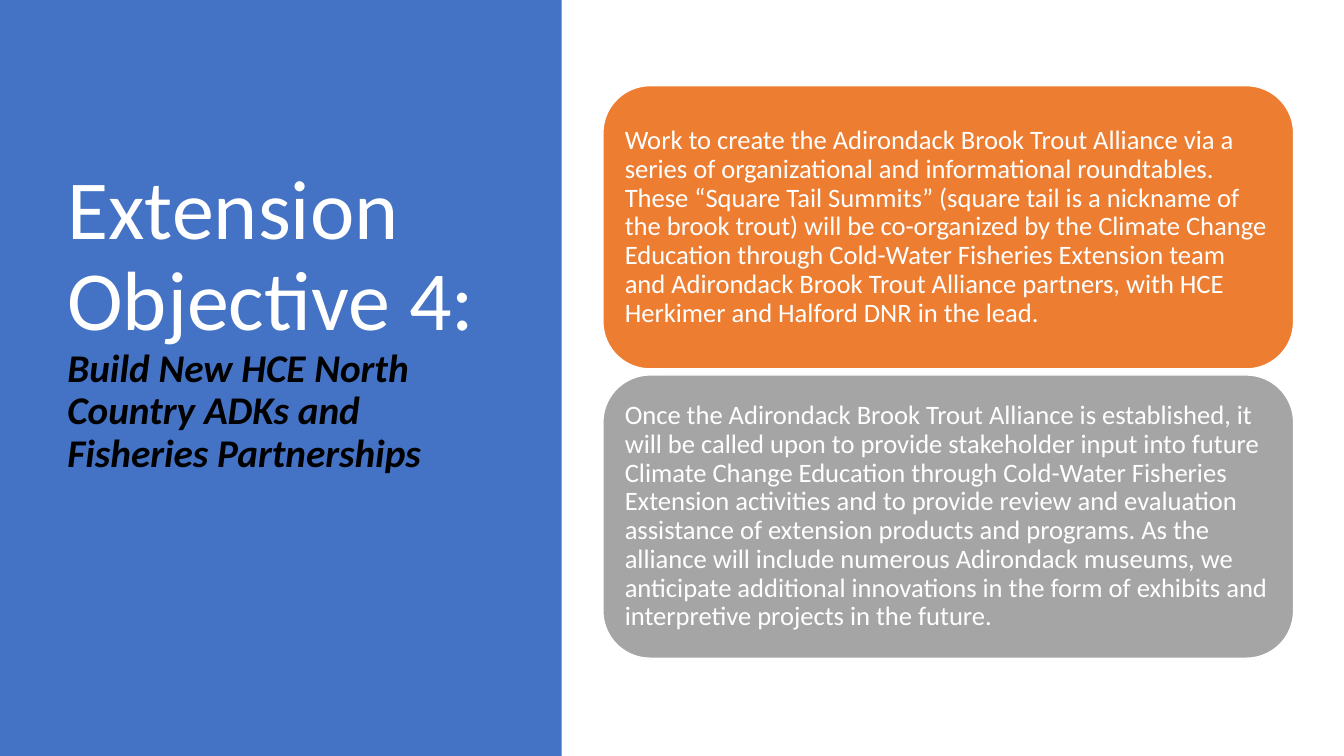
from dataclasses import dataclass

from pptx import Presentation
from pptx.dml.color import RGBColor
from pptx.enum.shapes import MSO_SHAPE as Shape
from pptx.enum.text import MSO_ANCHOR as Anchor, PP_ALIGN as Align
from pptx.util import Emu, Pt

PX = 9144  # EMU per px, 100 px to the inch
SLIDE_W, SLIDE_H = 1333, 750
PANEL_W = 557
CARD_X, CARD_Y, CARD_W, CARD_H = 598, 85, 685, 281
CARD_PITCH = 287
FONT = "Calibri"

BLUE = RGBColor(0x44, 0x72, 0xC4)
ORANGE = RGBColor(0xED, 0x7D, 0x31)
GRAY = RGBColor(0xA5, 0xA5, 0xA5)
WHITE = RGBColor(0xFF, 0xFF, 0xFF)
BLACK = RGBColor(0x00, 0x00, 0x00)


@dataclass
class TextRun:
    text: str
    size: int
    color: RGBColor = WHITE
    emphasis: bool = False


@dataclass
class Card:
    fill: RGBColor
    text: str


TITLE = [
    TextRun("Extension Objective 4: ", 60),
    TextRun("Build New HCE North Country ADKs and Fisheries Partnerships", 28, BLACK, True),
]

CARDS = [
    Card(ORANGE, "Work to create the Adirondack Brook Trout Alliance via a series of "
                 "organizational and informational roundtables. These “Square Tail Summits” "
                 "(square tail is a nickname of the brook trout) will be co-organized by the "
                 "Climate Change Education through Cold-Water Fisheries Extension team and "
                 "Adirondack Brook Trout Alliance partners, with HCE Herkimer and Halford DNR "
                 "in the lead."),
    Card(GRAY, "Once the Adirondack Brook Trout Alliance is established, it will be called upon "
               "to provide stakeholder input into future Climate Change Education through "
               "Cold-Water Fisheries Extension activities and to provide review and evaluation "
               "assistance of extension products and programs. As the alliance will include "
               "numerous Adirondack museums, we anticipate additional innovations in the form "
               "of exhibits and interpretive projects in the future."),
]


def px(*values: int) -> list[Emu]:
    return [Emu(v * PX) for v in values]


def add_block(slide, kind: Shape, box: tuple[int, int, int, int], fill: RGBColor):
    sp = slide.shapes.add_shape(kind, *px(*box))
    sp.shadow.inherit = False
    sp.fill.solid()
    sp.fill.fore_color.rgb = fill
    sp.line.fill.background()
    return sp


def write(tf, runs: list[TextRun], insets: tuple[int, int, int, int]) -> None:
    """Fill a frame with one left-aligned paragraph; insets run left, top, right, bottom."""
    tf.word_wrap = True
    tf.vertical_anchor = Anchor.MIDDLE
    tf.margin_left, tf.margin_top, tf.margin_right, tf.margin_bottom = px(*insets)
    p = tf.paragraphs[0]
    p.alignment = Align.LEFT
    p.line_spacing = 0.9
    for run in runs:
        r = p.add_run()
        r.text = run.text
        r.font.name = FONT
        r.font.size = Pt(run.size)
        r.font.color.rgb = run.color
        r.font.bold = r.font.italic = run.emphasis


def main() -> None:
    prs = Presentation()
    prs.slide_width, prs.slide_height = px(SLIDE_W, SLIDE_H)
    slide = prs.slides.add_slide(prs.slide_layouts[6])

    add_block(slide, Shape.RECTANGLE, (0, 0, PANEL_W, SLIDE_H), BLUE)
    title = slide.shapes.add_textbox(*px(57, 68, 436, 602))
    write(title.text_frame, TITLE, (10, 5, 10, 105))

    for i, card in enumerate(CARDS):
        box = (CARD_X, CARD_Y + i * CARD_PITCH, CARD_W, CARD_H)
        sp = add_block(slide, Shape.ROUNDED_RECTANGLE, box, card.fill)
        sp.line.color.rgb = WHITE
        sp.line.width = Pt(1)
        write(sp.text_frame, [TextRun(card.text, 19)], (8, 8, 8, 8))

    prs.save("out.pptx")


if __name__ == "__main__":
    main()
